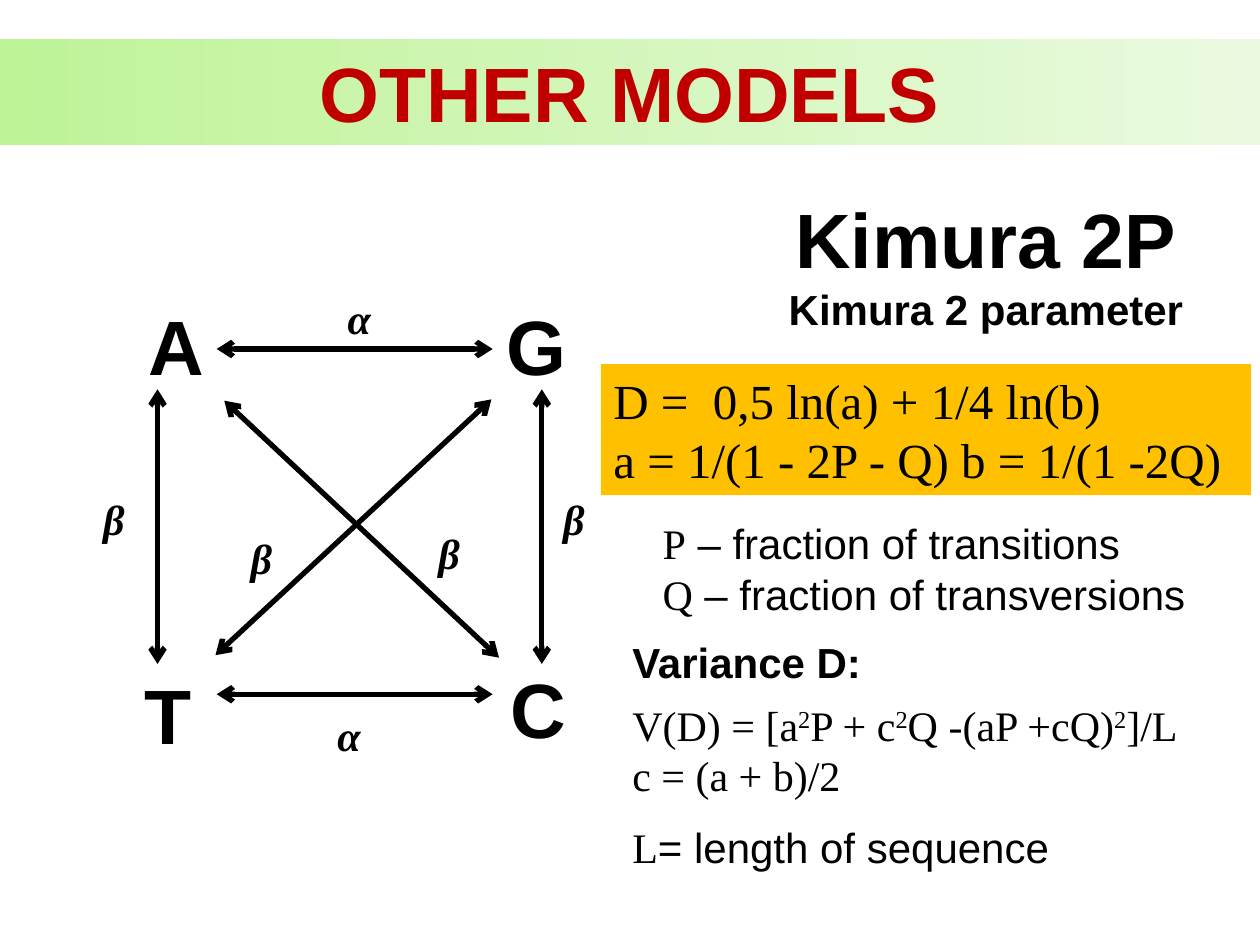
from dataclasses import dataclass

from lxml.etree import SubElement
from pptx import Presentation
from pptx.dml.color import RGBColor
from pptx.enum.shapes import MSO_CONNECTOR, MSO_SHAPE
from pptx.enum.text import MSO_ANCHOR, PP_ALIGN
from pptx.oxml.ns import qn
from pptx.util import Inches, Pt


@dataclass(frozen=True)
class Theme:
    ink: str = "000000"
    title: str = "C00000"
    formula: str = "FFC000"
    band: tuple = ("BEF397", "EAFAE0")
    sans: str = "Arial"
    serif: str = "Times New Roman"
    heading: int = 44
    equation: int = 28
    body: int = 24
    stroke: int = 3


class Board:
    """Current slide on a grid of 100 columns by 75 rows."""

    def __init__(self, deck, theme):
        self.theme = theme
        self.slide = deck.slides.add_slide(deck.slide_layouts[6])
        self.column = deck.slide_width / 100
        self.row = deck.slide_height / 75

    def place(self, col, row, cols, rows):
        return (round(col * self.column), round(row * self.row),
                round(cols * self.column), round(rows * self.row))

    def fill_text(self, frame, paragraphs, size, color=None, align=PP_ALIGN.LEFT,
                  wrap=True, gap=0):
        """Each paragraph is a list of (text, options); a None text breaks the line."""
        frame.word_wrap = wrap
        for index, runs in enumerate(paragraphs):
            paragraph = frame.paragraphs[0] if index == 0 else frame.add_paragraph()
            paragraph.alignment = align
            if index:
                paragraph.space_before = Pt(gap)
            for text, options in runs:
                if text is None:
                    paragraph.add_line_break()
                    continue
                run = paragraph.add_run()
                run.text = text
                font = run.font
                font.name = options.get("font", self.theme.sans)
                font.size = Pt(options.get("size", size))
                font.bold = options.get("bold", False)
                font.italic = options.get("italic", False)
                font.color.rgb = RGBColor.from_string(color or self.theme.ink)
                if options.get("raised"):
                    run._r.get_or_add_rPr().set("baseline", "30000")

    def text(self, box, paragraphs, size, **style):
        frame = self.slide.shapes.add_textbox(*self.place(*box)).text_frame
        self.fill_text(frame, paragraphs, size, **style)

    def panel(self, box, fills, paragraphs, size, **style):
        shape = self.slide.shapes.add_shape(MSO_SHAPE.RECTANGLE, *self.place(*box))
        shape.shadow.inherit = False
        shape.line.fill.background()
        if len(fills) == 1:
            shape.fill.solid()
            shape.fill.fore_color.rgb = RGBColor.from_string(fills[0])
        else:
            shape.fill.gradient()
            shape.fill.gradient_angle = 0
            for stop, color in zip(shape.fill.gradient_stops, fills):
                stop.color.rgb = RGBColor.from_string(color)
        shape.text_frame.vertical_anchor = MSO_ANCHOR.MIDDLE
        self.fill_text(shape.text_frame, paragraphs, size, **style)

    def double_arrow(self, start, end):
        x1, y1, x2, y2 = self.place(*start, *end)
        arrow = self.slide.shapes.add_connector(MSO_CONNECTOR.STRAIGHT, x1, y1, x2, y2)
        arrow.line.width = Pt(self.theme.stroke)
        arrow.line.color.rgb = RGBColor.from_string(self.theme.ink)
        properties = arrow._element.spPr
        outline = properties.find(qn("a:ln"))
        for end_tag in ("a:headEnd", "a:tailEnd"):
            SubElement(outline, qn(end_tag), type="arrow")
        SubElement(properties, qn("a:effectLst"))


def main():
    theme = Theme()
    deck = Presentation()
    deck.slide_width, deck.slide_height = Inches(10), Inches(7.5)
    board = Board(deck, theme)
    bold = {"bold": True}
    serif = {"font": theme.serif}
    raised = {**serif, "raised": True}
    greek = {**serif, "bold": True, "italic": True}

    # Nucleotides at the corners of the substitution diagram
    for base, col, row in (("A", 10.8, 23.2), ("G", 39.2, 23.2),
                           ("C", 39.5, 52), ("T", 10.5, 52.5)):
        board.text((col, row, 7, 8.4), [[(base, bold)]], theme.heading)

    # Substitutions: horizontal, vertical, diagonal
    for row in (27.7, 55.1):
        board.double_arrow((17.2, row), (39.1, row))
    for col in (12.5, 43):
        board.double_arrow((col, 30.9), (col, 52.7))
    board.double_arrow((17.8, 31.8), (39.6, 52.2))
    board.double_arrow((39, 31.7), (17.1, 52))

    # Rates: α for transitions, β for transversions
    for rate, col, row in (("α", 26.6, 22.7), ("α", 25.8, 55.8),
                           ("β", 43.7, 38.7), ("β", 7.2, 38.7),
                           ("β", 33.8, 41.4), ("β", 18.9, 41.8)):
        board.text((col, row, 3.8, 5), [[(rate, greek)]], theme.body, wrap=False)

    # Distance formula and its terms
    board.panel((47.7, 28.9, 51.6, 10.4), [theme.formula],
                [[("D =  0,5 ln(a) + 1/4 ln(b)", serif)],
                 [("a = 1/(1 - 2P - Q) b = 1/(1 -2Q)", serif)]], theme.equation)
    board.text((51.6, 40.6, 43.9, 9.1),
               [[("P", serif), (" – fraction of transitions", {})],
                [("Q", serif), (" – fraction of transversions", {})]],
               theme.body, wrap=False)

    # Variance
    board.text((49.2, 50, 20.4, 5), [[("Variance D:", bold)]], theme.body, wrap=False)
    board.text((49.2, 55, 50, 15.1),
               [[("V(D) = [a", serif), ("2", raised), ("P + c", serif), ("2", raised),
                 ("Q -(aP +cQ)", serif), ("2", raised), ("]/L", serif), (None, {}),
                 ("c = (a + b)/2", serif)],
                [("L", serif), ("= length of sequence", {})]], theme.body, gap=12)

    # Title band and model name
    board.panel((0, 3.1, 100, 8.4), theme.band, [[("OTHER MODELS", bold)]],
                theme.heading, color=theme.title, align=PP_ALIGN.CENTER)
    board.text((61.4, 14.7, 33.7, 12.5),
               [[("Kimura 2P", bold)],
                [("Kimura 2 parameter", {**bold, "size": theme.body})]],
               theme.heading, align=PP_ALIGN.CENTER, wrap=False)

    deck.save("out.pptx")


if __name__ == "__main__":
    main()
